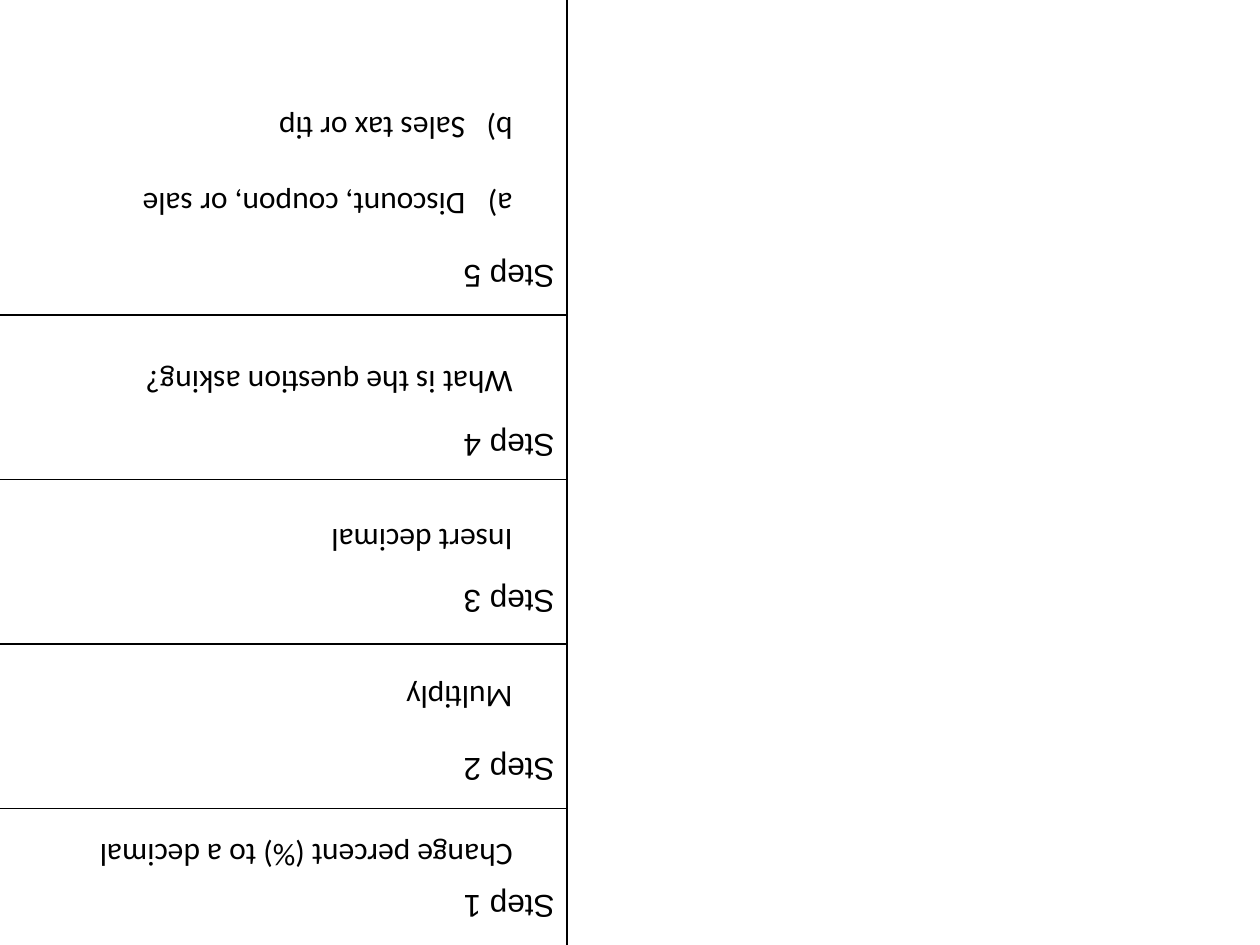
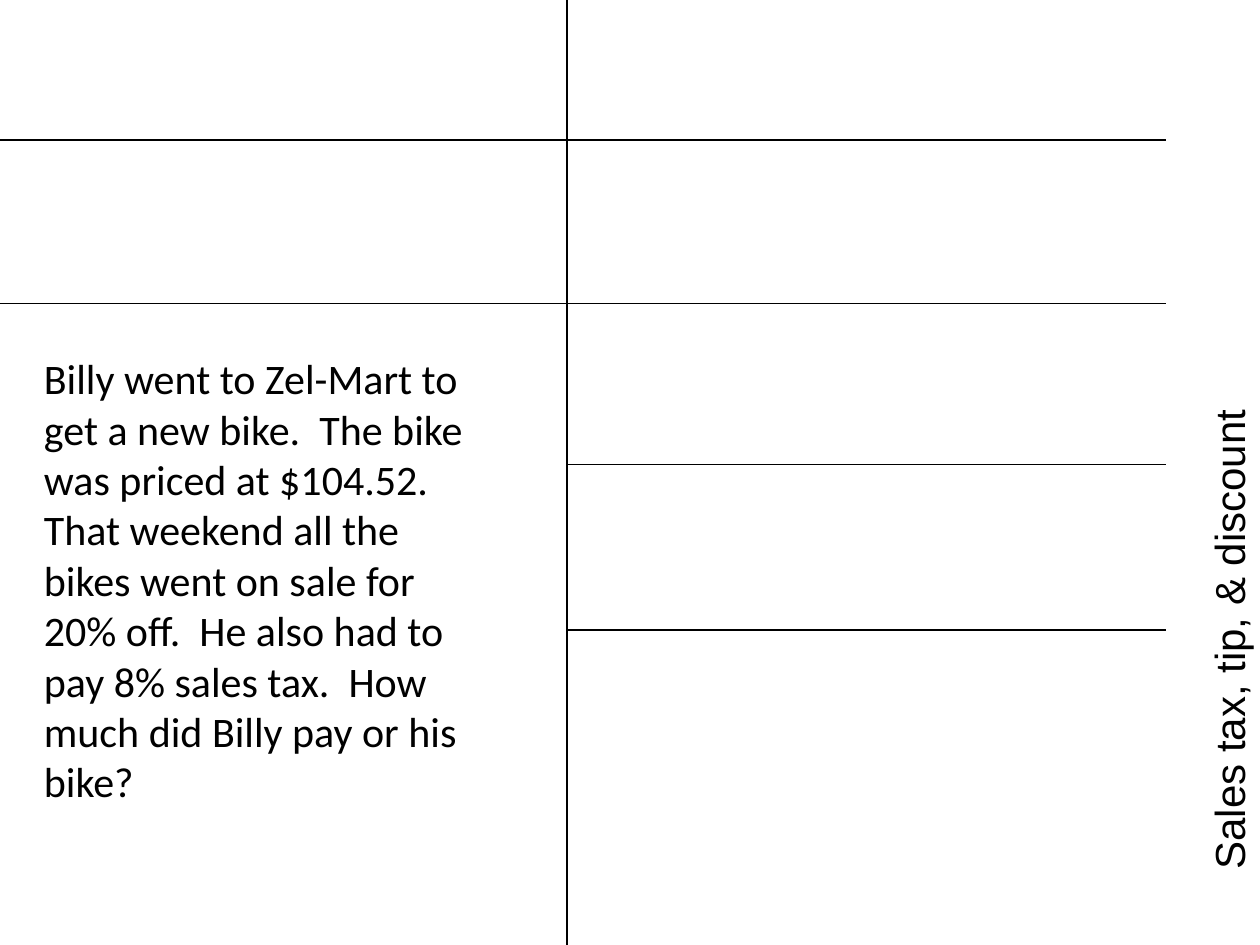
from dataclasses import dataclass
from typing import Iterable, Optional

from lxml import etree
from pptx import Presentation
from pptx import util as u
from pptx.dml.color import RGBColor
from pptx.enum import shapes, text
from pptx.oxml import ns
from pptx.slide import Slide

Pt = u.Pt


@dataclass(frozen=True)
class Theme:
    ink: RGBColor = RGBColor(0, 0, 0)
    paper: RGBColor = RGBColor(255, 255, 255)
    label_font: str = "Arial"
    body_font: str = "Calibri"
    step_size: float = 18
    story_size: float = 24
    rule_width: float = 0.75


THEME = Theme()
PAGE_W, PAGE_H = 720, 540
FOLD_X = 324  # fold between the two halves of the page


@dataclass(frozen=True)
class Rule:
    x1: float
    y1: float
    x2: float
    y2: float


@dataclass(frozen=True)
class Note:
    lines: tuple[str, ...]
    left: float
    top: float
    width: float
    height: float
    font: str
    size: float
    rotation: float = 0
    numbering: Optional[str] = None


@dataclass(frozen=True)
class Step:
    label_top: float
    hint_top: float
    hints: tuple[str, ...]


STEPS = (
    Step(504.5, 475, ("Change percent (%) to a decimal",)),
    Step(426, 385, ("Multiply",)),
    Step(330, 295, ("Insert decimal",)),
    Step(241, 205, ("What is the question asking?",)),
    Step(144.5, 59, ("Discount, coupon, or sale", "Sales tax or tip")),
)

STORY = (
    "Billy went to Zel-Mart to get a new bike.  The bike was priced at "
    "$104.52.  That weekend all the bikes went on sale for 20% off.  He also "
    "had to pay 8% sales tax.  How much did Billy pay or his bike?"
)


def draw_rules(slide: Slide, rules: Iterable[Rule]) -> None:
    for rule in rules:
        ends = (Pt(v) for v in (rule.x1, rule.y1, rule.x2, rule.y2))
        line = slide.shapes.add_connector(shapes.MSO_CONNECTOR.STRAIGHT, *ends)
        line.line.color.rgb = THEME.ink
        line.line.width = Pt(THEME.rule_width)
        etree.SubElement(line._element.spPr, ns.qn("a:effectLst"))


def draw_note(slide: Slide, note: Note) -> None:
    box = slide.shapes.add_textbox(
        Pt(note.left), Pt(note.top), Pt(note.width), Pt(note.height))
    box.rotation = note.rotation
    frame = box.text_frame
    frame.word_wrap = True
    frame.auto_size = text.MSO_AUTO_SIZE.NONE
    font_format = {"name": note.font, "size": Pt(note.size)}
    for index, line in enumerate(note.lines):
        paragraph = frame.add_paragraph() if index else frame.paragraphs[0]
        paragraph.alignment = text.PP_ALIGN.LEFT
        if index:
            paragraph.space_before = Pt(21.6)
        if note.numbering:
            props = paragraph._p.get_or_add_pPr()
            props.set("marL", str(Pt(27)))
            props.set("indent", str(Pt(-27)))
            etree.SubElement(props, ns.qn("a:buFont"), typeface="+mj-lt")
            etree.SubElement(props, ns.qn("a:buAutoNum"), type=note.numbering)
        run = paragraph.add_run()
        run.text = line
        for name, value in font_format.items():
            setattr(run.font, name, value)
        run.font.color.rgb = THEME.ink


def new_page(deck: Presentation) -> Slide:
    slide = deck.slides.add_slide(deck.slide_layouts[6])
    slide.background.fill.solid()
    slide.background.fill.fore_color.rgb = THEME.paper
    draw_rules(slide, [Rule(FOLD_X, 0, FOLD_X, PAGE_H)])
    return slide


def build_steps(deck: Presentation) -> None:
    """Five flaps, upside down so that they read right once folded."""
    slide = new_page(deck)
    draw_rules(slide, (Rule(0, y, FOLD_X, y) for y in range(180, 463, 94)))

    label_width, hint_width, hint_right = 93, 265, 300
    for number, step in enumerate(STEPS, 1):
        draw_note(slide, Note(
            (f"Step {number}",), FOLD_X - label_width, step.label_top,
            label_width, 29, THEME.label_font, THEME.step_size, 180))
        is_list = len(step.hints) > 1
        draw_note(slide, Note(
            step.hints, hint_right - hint_width, step.hint_top, hint_width,
            73 if is_list else 29, THEME.body_font, THEME.step_size, 180,
            "alphaLcParenR" if is_list else None))


def build_problem(deck: Presentation) -> None:
    """Word problem on the left, working space on the right."""
    slide = new_page(deck)
    seam, flap_right = 288, 666
    flap_tops = (80, 173.5, 265.5, 360)
    draw_rules(slide, (Rule(seam, y, flap_right, y) for y in flap_tops[:2]))
    draw_rules(slide, (Rule(FOLD_X, y, flap_right, y) for y in flap_tops[2:]))
    draw_rules(slide, (Rule(0, y, seam, y) for y in flap_tops[:2]))

    draw_note(slide, Note(
        (STORY,), 18, 198, 270, 269, THEME.body_font, THEME.story_size))
    draw_note(slide, Note(
        ("Sales tax, tip, & discount",), 466, 250, 472, 36,
        THEME.label_font, THEME.story_size, 270))


def main() -> None:
    deck = Presentation()
    deck.slide_width, deck.slide_height = Pt(PAGE_W), Pt(PAGE_H)
    build_steps(deck)
    build_problem(deck)
    deck.save("out.pptx")


if __name__ == "__main__":
    main()
